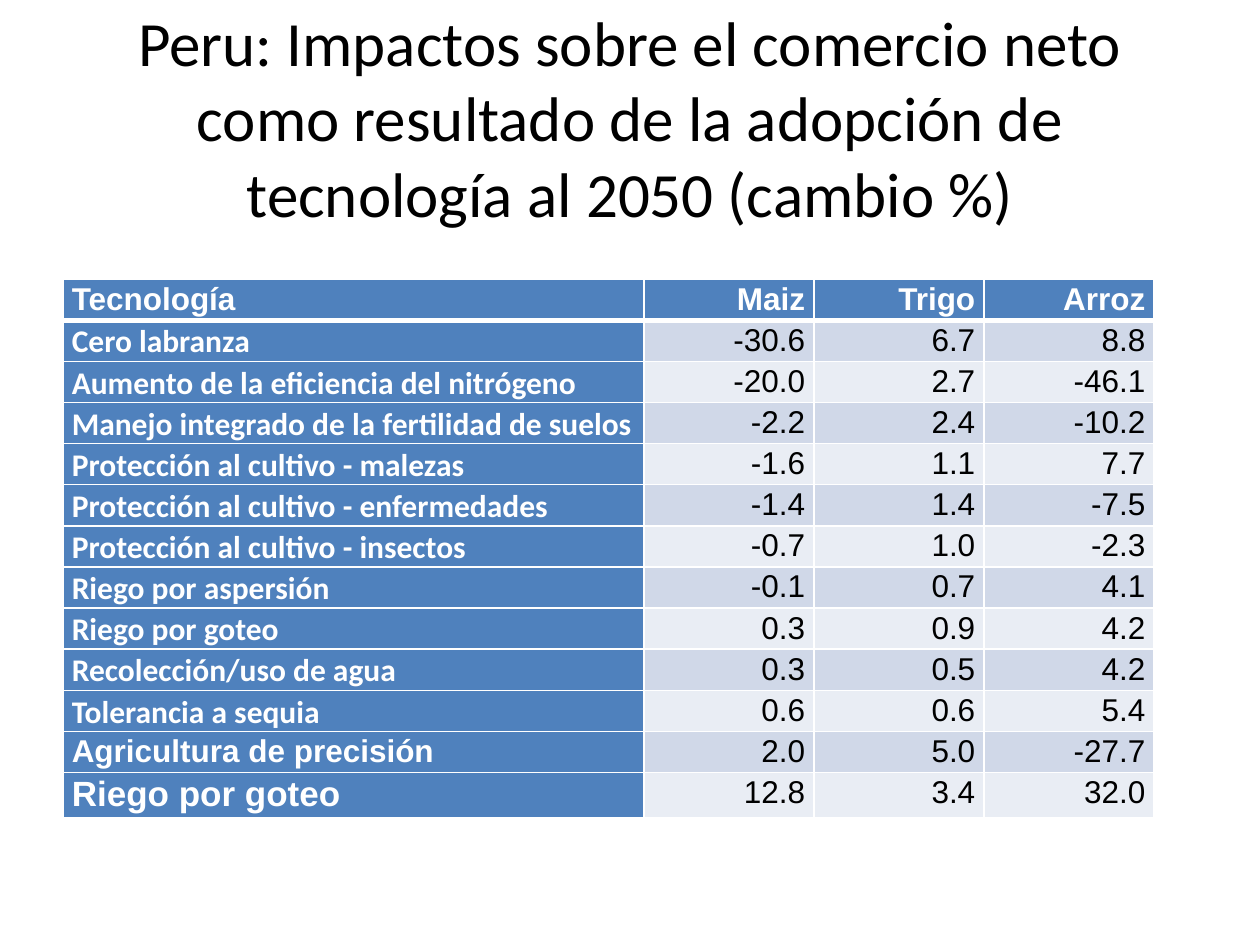
from lxml.etree import SubElement
from pptx import Presentation
from pptx.dml.color import RGBColor
from pptx.enum.text import MSO_ANCHOR, PP_ALIGN
from pptx.oxml.ns import qn
from pptx.util import Inches, Pt

WHITE = RGBColor(0xFF, 0xFF, 0xFF)
BLACK = RGBColor(0, 0, 0)
BLUE = RGBColor(0x4F, 0x81, 0xBD)
BANDS = (RGBColor(0xE9, 0xED, 0xF4), RGBColor(0xD0, 0xD8, 0xE8))

TITLE = ("Peru: Impactos sobre el comercio neto como resultado "
         "de la adopción de tecnología al 2050 (cambio %)")
ROWS = [
    ("Tecnología", "Maiz", "Trigo", "Arroz"),
    ("Cero labranza", "-30.6", "6.7", "8.8"),
    ("Aumento de la eficiencia del nitrógeno", "-20.0", "2.7", "-46.1"),
    ("Manejo integrado de la fertilidad de suelos", "-2.2", "2.4", "-10.2"),
    ("Protección al cultivo - malezas", "-1.6", "1.1", "7.7"),
    ("Protección al cultivo - enfermedades", "-1.4", "1.4", "-7.5"),
    ("Protección al cultivo - insectos", "-0.7", "1.0", "-2.3"),
    ("Riego por aspersión", "-0.1", "0.7", "4.1"),
    ("Riego por goteo", "0.3", "0.9", "4.2"),
    ("Recolección/uso de agua", "0.3", "0.5", "4.2"),
    ("Tolerancia a sequia", "0.6", "0.6", "5.4"),
    ("Agricultura de precisión", "2.0", "5.0", "-27.7"),
    ("Riego por goteo", "12.8", "3.4", "32.0"),
]
LAST = len(ROWS) - 1
WIDTHS = (4.61, 1.35, 1.35, 1.35)
HEAD, TALL = 0.3, 4.22


def add_run(para, text, font, size, color, bold=False):
    run = para.add_run()
    run.text = text
    run.font.name = font
    run.font.size = Pt(size)
    run.font.color.rgb = color
    run.font.bold = bold


def add_title(slide):
    box = slide.shapes.add_textbox(Inches(0.5), Inches(0.3), Inches(9), Inches(1.25))
    frame = box.text_frame
    frame.word_wrap = True
    frame.vertical_anchor = MSO_ANCHOR.MIDDLE
    para = frame.paragraphs[0]
    para.alignment = PP_ALIGN.CENTER
    add_run(para, TITLE, "Calibri", 36, BLACK)


def set_lines(cell, row):
    props = cell._tc.get_or_add_tcPr()
    thick = {"T": 3 if row == 1 else 1, "B": 3 if row == 0 else 1}
    for spot, side in enumerate("LRTB"):
        line = SubElement(props, qn(f"a:ln{side}"), w=str(Pt(thick.get(side, 1))))
        fill = SubElement(line, qn("a:solidFill"))
        SubElement(fill, qn("a:srgbClr"), val=str(WHITE))
        props.insert(spot, line)


def fill_cell(cell, text, row, col):
    label = row == 0 or col == 0
    cell.margin_left = cell.margin_right = Inches(0.07)
    cell.margin_top = cell.margin_bottom = 0
    cell.fill.solid()
    cell.fill.fore_color.rgb = BLUE if label else BANDS[row % 2]
    set_lines(cell, row)
    para = cell.text_frame.paragraphs[0]
    para.line_spacing = 1.07
    para.alignment = PP_ALIGN.RIGHT if col else PP_ALIGN.LEFT
    font = "Calibri" if col == 0 and 0 < row < LAST - 1 else "Arial"
    size = 20 if (row, col) == (LAST, 0) else 18
    add_run(para, text, font, size, WHITE if label else BLACK, label)


def add_grid(slide):
    table = slide.shapes.add_table(
        len(ROWS), len(WIDTHS), Inches(0.5), Inches(2.22),
        Inches(sum(WIDTHS)), Inches(TALL)).table
    for col, width in zip(table.columns, WIDTHS):
        col.width = Inches(width)
    for row, texts in enumerate(ROWS):
        table.rows[row].height = Inches((TALL - HEAD) / LAST if row else HEAD)
        for col, text in enumerate(texts):
            fill_cell(table.cell(row, col), text, row, col)


def main():
    deck = Presentation()
    deck.slide_width, deck.slide_height = Inches(10), Inches(7.5)
    slide = deck.slides.add_slide(deck.slide_layouts[6])
    add_title(slide)
    add_grid(slide)
    deck.save("out.pptx")


if __name__ == "__main__":
    main()
